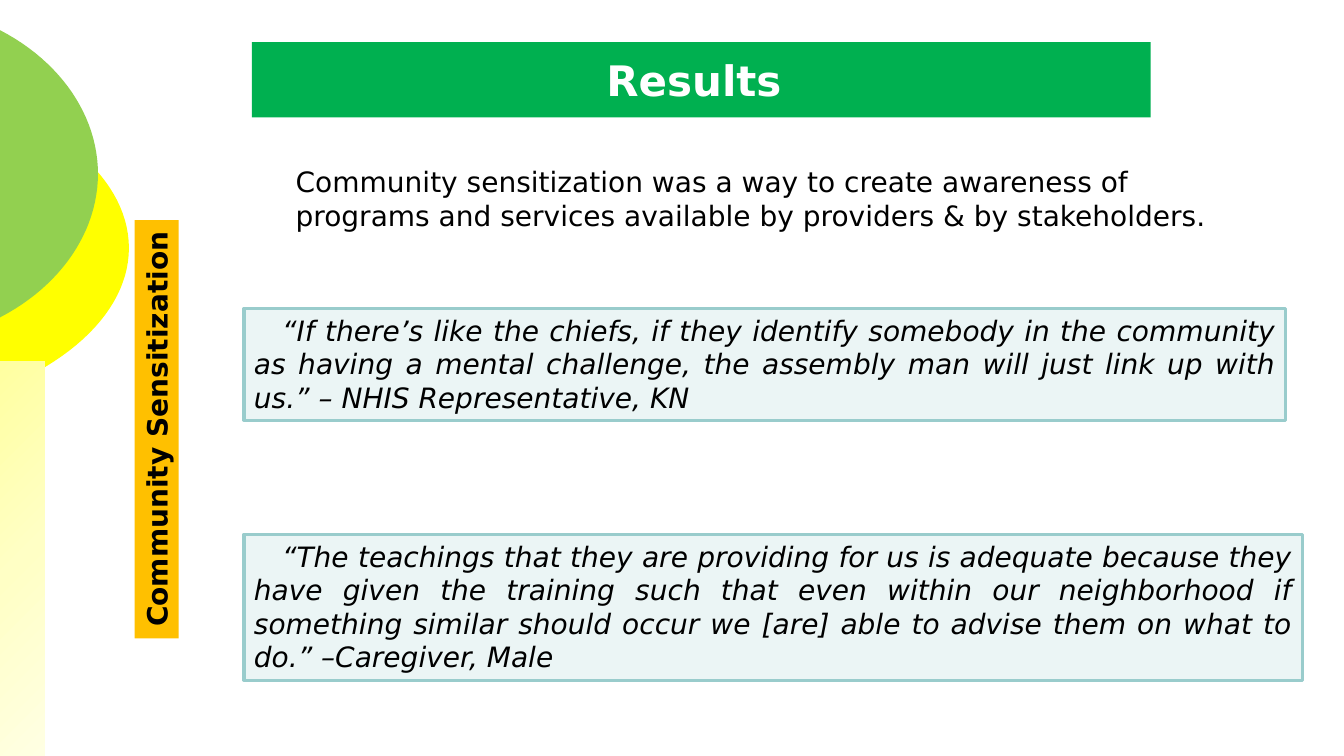
from lxml import etree
from pptx import Presentation
from pptx.dml.color import RGBColor
from pptx.enum import shapes as sh, text as tx
from pptx.oxml import ns
from pptx.util import Cm, Pt

FONT = "DejaVu Sans"
BLACK = RGBColor(0, 0, 0)
WHITE = RGBColor(255, 255, 255)
GREEN = RGBColor(0, 0xB0, 0x50)
AMBER = RGBColor(0xFF, 0xC0, 0)
LIME = RGBColor(0x92, 0xD0, 0x50)
YELLOW = RGBColor(0xFF, 0xFF, 0)
PALE = RGBColor(0xEB, 0xF5, 0xF5)
TEAL = RGBColor(0x99, 0xCC, 0xCC)
GLOW = ((0, "FFFFA0"), (50, "FFFFC5"), (100, "FFFFE3"))


def paint(shape, fill, line=None):
    shape.shadow.inherit = False
    shape.fill.solid()
    shape.fill.fore_color.rgb = fill
    if line is None:
        shape.line.fill.background()
    else:
        shape.line.color.rgb = line
        shape.line.width = Pt(2.25)


def add_box(slide, at, fill, line=None):
    box = slide.shapes.add_shape(sh.MSO_SHAPE.RECTANGLE, *map(Cm, at))
    paint(box, fill, line)
    return box


def write(shape, words, size=20, color=BLACK, bold=False, italic=False,
          align=tx.PP_ALIGN.LEFT, anchor=tx.MSO_ANCHOR.TOP, indent=0, grow=True):
    frame = shape.text_frame
    frame.word_wrap = True
    frame.vertical_anchor = anchor
    if grow:
        frame.auto_size = tx.MSO_AUTO_SIZE.SHAPE_TO_FIT_TEXT
    para = frame.paragraphs[0]
    para.alignment = align
    if indent:
        para._p.get_or_add_pPr().set("indent", str(Cm(indent)))
    run = para.add_run()
    run.text = words
    font = run.font
    font.name, font.size, font.bold, font.italic = FONT, Pt(size), bold, italic
    font.color.rgb = color


def curve(start, bend, pull, tip, steps=24):
    """Points of one cubic Bezier curve, in centimetres."""
    for i in range(steps + 1):
        t = i / steps
        parts = ((1 - t) ** 3, 3 * t * (1 - t) ** 2, 3 * t * t * (1 - t), t ** 3)
        yield tuple(sum(k * p[axis] for k, p in zip(parts, (start, bend, pull, tip)))
                    for axis in (0, 1))


def add_lobe(slide, color, top, mid, reach, bend, lift):
    """Half oval that bulges from the left edge, mirrored about its middle."""
    upper = list(curve((0, top), bend, (reach, mid - lift), (reach, mid)))
    lower = [(x, 2 * mid - y) for x, y in reversed(upper[:-1])]
    dots = [(Cm(x), Cm(y)) for x, y in upper + lower]
    pen = slide.shapes.build_freeform(*dots[0])
    pen.add_line_segments(dots[1:], close=True)
    paint(pen.convert_to_shape(), color)


def add_glow(slide, at):
    """Bar with a radial gradient centred on its top left corner."""
    bar = add_box(slide, at, YELLOW)
    bar.fill.gradient()
    grad = bar._element.spPr.find(ns.qn("a:gradFill"))
    for part in list(grad):
        grad.remove(part)
    stops = etree.SubElement(grad, ns.qn("a:gsLst"))
    for place, color in GLOW:
        stop = etree.SubElement(stops, ns.qn("a:gs"), pos=str(place * 1000))
        etree.SubElement(stop, ns.qn("a:srgbClr"), val=color)
    ring = etree.SubElement(grad, ns.qn("a:path"), path="circle")
    etree.SubElement(ring, ns.qn("a:fillToRect"), r="100000", b="100000")


def add_title(slide, words):
    box = add_box(slide, (6.35, 1.06, 22.65, 1.9), GREEN)
    frame = box.text_frame
    frame.margin_left = frame.margin_right = Cm(0.18)
    frame.margin_top = frame.margin_bottom = Cm(0.1)
    write(box, words, size=30, color=WHITE, bold=True, grow=False,
          align=tx.PP_ALIGN.CENTER, anchor=tx.MSO_ANCHOR.MIDDLE)


def add_theme(slide, words):
    box = add_box(slide, (-1.32, 10.26, 10.54, 1.11), AMBER)
    box.rotation = 270
    write(box, words, bold=True, align=tx.PP_ALIGN.CENTER)


def add_quote(slide, top, width, height, words):
    box = add_box(slide, (6.15, top, width, height), PALE, TEAL)
    write(box, words, italic=True, align=tx.PP_ALIGN.JUSTIFY, indent=0.71)


def main():
    deck = Presentation()
    deck.slide_width, deck.slide_height = Cm(33.87), Cm(19.05)
    slide = deck.slides.add_slide(deck.slide_layouts[6])

    add_lobe(slide, YELLOW, top=2.69, mid=6.25, reach=3.25, bend=(2.03, 3.51), lift=1.42)
    add_lobe(slide, LIME, top=0.76, mid=4.38, reach=2.47, bend=(1.56, 1.57), lift=1.43)
    add_glow(slide, (0, 9.1, 1.13, 9.95))

    add_title(slide, "Results ")
    add_theme(slide, "Community Sensitization")
    intro = slide.shapes.add_textbox(Cm(7.2), Cm(4.02), Cm(24.77), Cm(1.97))
    write(intro, "Community sensitization was a way to create awareness of programs "
                 "and services available by providers & by stakeholders.")
    add_quote(slide, 7.77, 26.25, 2.82,
              "“If there’s like the chiefs, if they identify somebody in the community "
              "as having a mental challenge, the assembly man will just link up with "
              "us.” – NHIS Representative, KN")
    add_quote(slide, 13.46, 26.67, 3.68,
              "“The teachings that they are providing for us is adequate because they "
              "have given the training such that even within our neighborhood if "
              "something similar should occur we [are] able to advise them on what to "
              "do.” –Caregiver, Male")
    deck.save("out.pptx")


if __name__ == "__main__":
    main()
